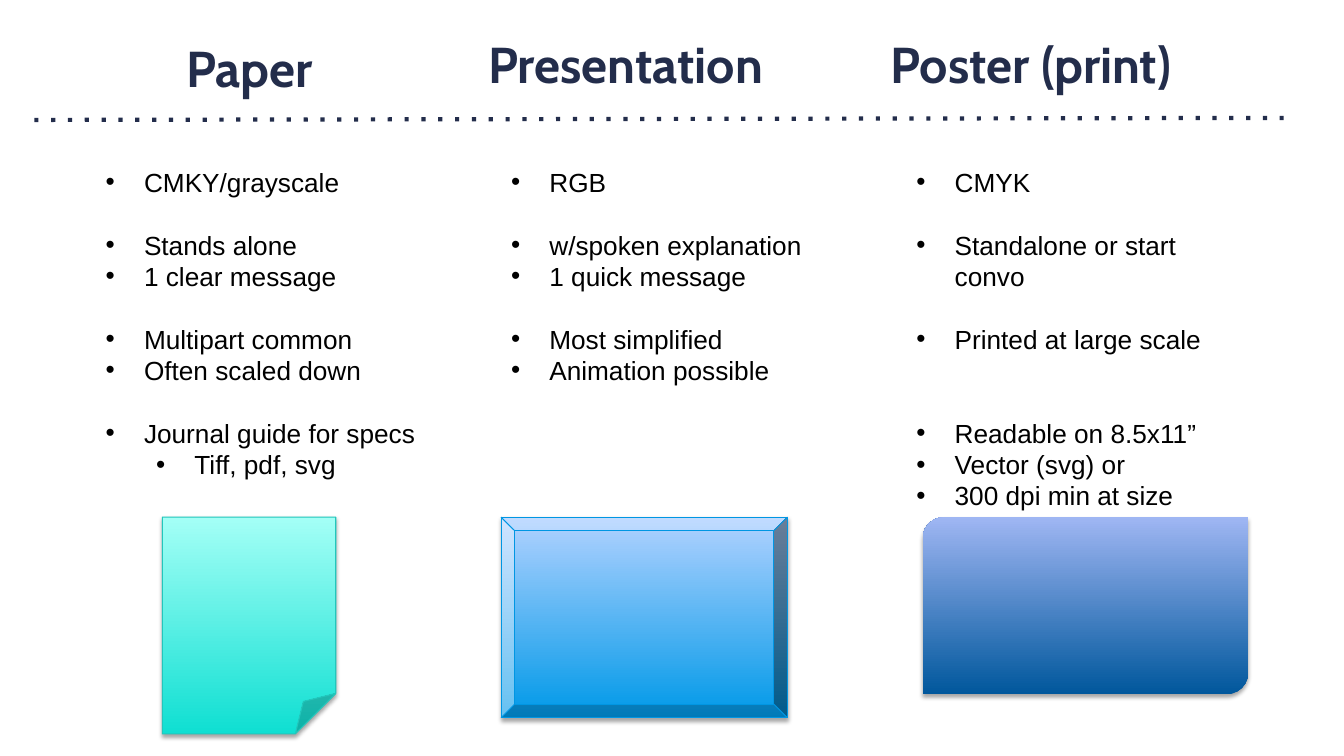
from dataclasses import dataclass

import pptx
import pptx.dml.color
import pptx.enum.dml
import pptx.enum.shapes
import pptx.enum.text
import pptx.oxml
import pptx.oxml.ns
import pptx.util
from lxml import etree

Inches, Pt = pptx.util.Inches, pptx.util.Pt
rgb = pptx.dml.color.RGBColor.from_string
qn = pptx.oxml.ns.qn
SHAPES = pptx.enum.shapes.MSO_SHAPE


@dataclass(frozen=True)
class Theme:
    heading_font: str = "Cabin"
    heading_size: float = 36
    heading_color: str = "232D4B"
    body_font: str = "Arial"
    body_size: float = 18.7
    body_color: str = "000000"
    line_pitch: float = 22.4
    shadow_color: str = "000000"


THEME = Theme()
BULLET_INDENT = 0.38
LEVEL_STEP = 0.5
COLUMN_LEFT, COLUMN_PITCH = 0.95, 4.02
BODY_TOP, BODY_WIDTH, BODY_HEIGHT = 1.6, 3.39, 5.1
HEADING_WIDTH, HEADING_HEIGHT = 3.73, 0.93
FORMAT_TOP = 5.13

# Each point: text, empty lines above it, level
# Each format box: left, width, height; gradient runs from bottom to top
COLUMNS = [
    dict(
        heading="Paper", heading_at=(0.61, 0.24),
        points=[
            ("CMKY/grayscale", 0, 0),
            ("Stands alone", 1, 0),
            ("1 clear message", 0, 0),
            ("Multipart common", 1, 0),
            ("Often scaled down", 0, 0),
            ("Journal guide for specs", 1, 0),
            ("Tiff, pdf, svg", 0, 1),
        ],
        format=dict(kind=SHAPES.FOLDED_CORNER, box=(1.61, 1.72, 2.15),
                    adjustments={"adj": 23300},
                    gradient=("0FDFD2", "A4FFF6"), outline="22C7BC"),
    ),
    dict(
        heading="Presentation", heading_at=(4.34, 0.2),
        points=[
            ("RGB", 0, 0),
            ("w/spoken explanation", 1, 0),
            ("1 quick message", 0, 0),
            ("Most simplified", 1, 0),
            ("Animation possible", 0, 0),
        ],
        format=dict(kind=SHAPES.BEVEL, box=(4.97, 2.84, 1.99),
                    adjustments={"adj": 6800},
                    gradient=("0099E8", "B2D2FF"), outline="0096E3"),
    ),
    dict(
        heading="Poster (print)", heading_at=(8.36, 0.2),
        points=[
            ("CMYK", 0, 0),
            ("Standalone or start convo", 1, 0),
            ("Printed at large scale", 1, 0),
            ("Readable on 8.5x11”", 2, 0),
            ("Vector (svg) or", 0, 0),
            ("300 dpi min at size", 0, 0),
        ],
        format=dict(kind=SHAPES.ROUND_2_DIAG_RECTANGLE, box=(9.15, 3.23, 1.76),
                    adjustments={"adj1": 12300, "adj2": 0},
                    gradient=("00579C", "9FB6F3"), outline=None),
    ),
]


def add_divider(slide, start, end):
    divider = slide.shapes.add_connector(
        pptx.enum.shapes.MSO_CONNECTOR.STRAIGHT, *map(Inches, start + end))
    divider.line.color.rgb = rgb(THEME.heading_color)
    divider.line.width = Pt(3)
    divider.line.dash_style = pptx.enum.dml.MSO_LINE.ROUND_DOT
    properties = divider._element.spPr
    properties.find(".//" + qn("a:prstDash")).set("val", "dot")
    etree.SubElement(properties, qn("a:effectLst"))


def add_heading(slide, text, left, top):
    heading = slide.shapes.add_textbox(
        *map(Inches, (left, top, HEADING_WIDTH, HEADING_HEIGHT))).text_frame
    heading.word_wrap = True
    heading.vertical_anchor = pptx.enum.text.MSO_ANCHOR.MIDDLE
    heading.margin_top = heading.margin_bottom = Inches(0.1)
    title = heading.paragraphs[0]
    title.text = text
    title.alignment = pptx.enum.text.PP_ALIGN.CENTER
    title.line_spacing = 0.9
    title.font.name = THEME.heading_font
    title.font.size = Pt(THEME.heading_size)
    title.font.bold = True
    title.font.color.rgb = rgb(THEME.heading_color)


def add_bullet(point, level):
    properties = point._p.get_or_add_pPr()
    properties.set("marL", str(Inches(BULLET_INDENT + level * LEVEL_STEP)))
    properties.set("indent", str(Inches(-BULLET_INDENT)))
    color = etree.SubElement(properties, qn("a:buClr"))
    etree.SubElement(color, qn("a:srgbClr"), val=THEME.body_color)
    etree.SubElement(properties, qn("a:buFont"), typeface=THEME.body_font)
    etree.SubElement(properties, qn("a:buChar"), char="•")


def add_points(slide, points, left):
    body = slide.shapes.add_textbox(
        *map(Inches, (left, BODY_TOP, BODY_WIDTH, BODY_HEIGHT))).text_frame
    body.word_wrap = True
    for index, (text, empty_lines, level) in enumerate(points):
        point = body.add_paragraph() if index else body.paragraphs[0]
        point.text = text
        point.level = level
        point.line_spacing = Pt(THEME.line_pitch)
        point.space_before = Pt(empty_lines * THEME.line_pitch)
        add_bullet(point, level)
        point.font.name = THEME.body_font
        point.font.size = Pt(THEME.body_size)
        point.font.color.rgb = rgb(THEME.body_color)


def set_adjustments(shape, adjustments):
    guides = shape._element.spPr.find(qn("a:prstGeom")).find(qn("a:avLst"))
    for guide in list(guides):
        guides.remove(guide)
    for name, value in adjustments.items():
        etree.SubElement(guides, qn("a:gd"), name=name, fmla=f"val {value}")


def add_soft_shadow(shape):
    shape.shadow.inherit = False
    effects = shape._element.spPr.find(qn("a:effectLst"))
    shadow = etree.SubElement(
        effects, qn("a:outerShdw"), blurRad=str(Pt(3.1)), dist=str(Pt(1.8)),
        dir="5400000", rotWithShape="0")
    color = etree.SubElement(shadow, qn("a:srgbClr"), val=THEME.shadow_color)
    etree.SubElement(color, qn("a:alpha"), val="35000")


def add_format(slide, kind, box, adjustments, gradient, outline):
    left, width, height = box
    sheet = slide.shapes.add_shape(
        kind, *map(Inches, (left, FORMAT_TOP, width, height)))
    set_adjustments(sheet, adjustments)
    sheet.fill.gradient()
    sheet.fill.gradient_angle = 90
    for stop, color in zip(sheet.fill.gradient_stops, gradient):
        stop.color.rgb = rgb(color)
    if outline:
        sheet.line.color.rgb = rgb(outline)
        sheet.line.width = Pt(0.75)
    else:
        sheet.line.fill.background()
    add_soft_shadow(sheet)


def add_column(slide, column, left):
    add_heading(slide, column["heading"], *column["heading_at"])
    add_points(slide, column["points"], left)
    add_format(slide, **column["format"])


def main():
    deck = pptx.Presentation()
    deck.slide_width, deck.slide_height = Inches(13.33), Inches(7.5)
    slide = deck.slides.add_slide(deck.slide_layouts[6])
    add_divider(slide, (0.34, 1.19), (12.73, 1.17))
    for index, column in enumerate(COLUMNS):
        add_column(slide, column, COLUMN_LEFT + index * COLUMN_PITCH)
    deck.save("out.pptx")


if __name__ == "__main__":
    main()
